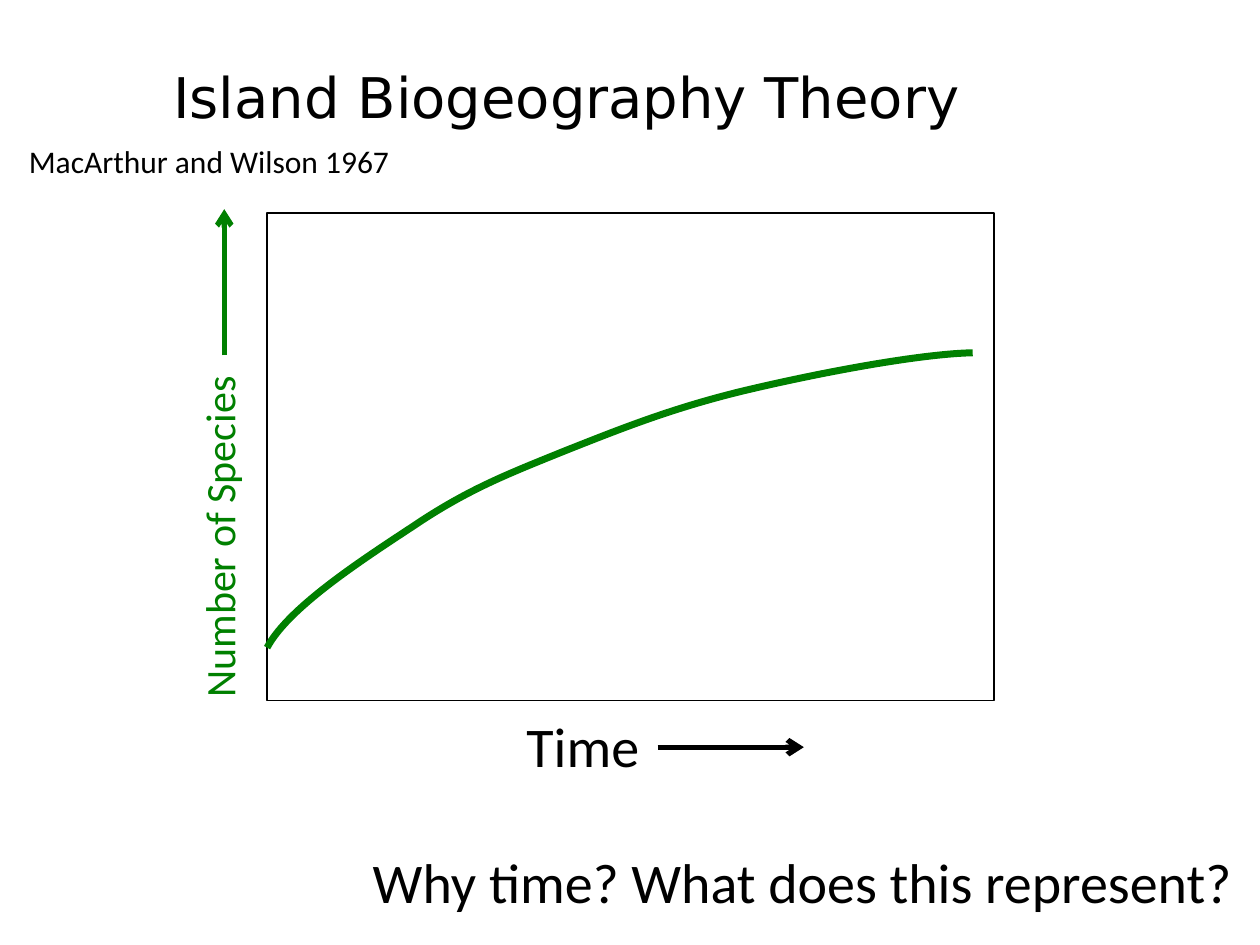
from dataclasses import dataclass

from lxml.etree import SubElement
from pptx import Presentation
from pptx.dml.color import RGBColor
from pptx.enum.shapes import MSO_CONNECTOR, MSO_SHAPE
from pptx.enum.text import MSO_ANCHOR, MSO_AUTO_SIZE, PP_ALIGN
from pptx.oxml.ns import qn
from pptx.util import Inches, Pt


@dataclass(frozen=True)
class Theme:
    black: RGBColor = RGBColor(0x00, 0x00, 0x00)
    green: RGBColor = RGBColor(0x00, 0x80, 0x00)
    title_font: str = "DejaVu Sans"
    body_font: str = "Calibri"
    large: int = 32
    medium: int = 24
    small: int = 18
    frame_line: float = 0.75
    arrow_line: float = 3
    curve_line: float = 4


THEME = Theme()
SLIDE_SIZE = (10, 7.5)

TITLE = ("Island Biogeography Theory", (0, 0.3, 9, 0.93))
PLOT_AREA = (2.12, 1.69, 5.77, 3.87)

# text, box, size, colour, rotation
LABELS = [
    ("Time", (4.08, 5.6, 1.13, 0.64), THEME.large, THEME.black, 0),
    ("Number of Species", (0.33, 3.98, 2.81, 0.5), THEME.medium, THEME.green, 270),
    ("MacArthur and Wilson 1967", (0.13, 1.08, 4.08, 0.5), THEME.small, THEME.black, 0),
    ("Why time? What does this represent?", (2.86, 6.68, 7.05, 0.64),
     THEME.large, THEME.black, 0),
]

# start, end, colour
AXIS_ARROWS = [
    ((5.22, 5.93), (6.38, 5.93), THEME.black),
    ((1.78, 2.82), (1.78, 1.66), THEME.green),
]

# start point, then two control points and an end point for each Bézier segment
SPECIES_CURVE = [
    (2.12, 5.14),
    (2.3, 4.8), (2.96, 4.39), (3.35, 4.13),
    (3.75, 3.87), (4.06, 3.75), (4.48, 3.58),
    (4.91, 3.41), (5.33, 3.24), (5.91, 3.1),
    (6.5, 2.96), (7.29, 2.81), (7.72, 2.8),
]


def inches(values):
    return [Inches(value) for value in values]


def place(shape, box):
    for name, value in zip(("left", "top", "width", "height"), inches(box)):
        setattr(shape, name, value)


def write(text_frame, text, font_name, size, color):
    paragraph = text_frame.paragraphs[0]
    run = paragraph.add_run()
    run.text = text
    for name, value in {"name": font_name, "size": Pt(size), "bold": False}.items():
        setattr(run.font, name, value)
    run.font.color.rgb = color
    return paragraph


def style_line(shape, color, width):
    shape.line.color.rgb = color
    shape.line.width = Pt(width)


def add_title(slide):
    text, box = TITLE
    title = slide.shapes.title
    place(title, box)
    title.text_frame.vertical_anchor = MSO_ANCHOR.MIDDLE
    paragraph = write(title.text_frame, text, THEME.title_font, THEME.large, THEME.black)
    paragraph.alignment = PP_ALIGN.CENTER


def add_plot_area(slide):
    frame = slide.shapes.add_shape(MSO_SHAPE.RECTANGLE, *inches(PLOT_AREA))
    frame.shadow.inherit = False
    frame.fill.background()
    style_line(frame, THEME.black, THEME.frame_line)


def add_label(slide, text, box, size, color, rotation):
    label = slide.shapes.add_textbox(*inches(box))
    label.rotation = rotation
    label.text_frame.word_wrap = False
    label.text_frame.auto_size = MSO_AUTO_SIZE.SHAPE_TO_FIT_TEXT
    write(label.text_frame, text, THEME.body_font, size, color)


def add_arrow(slide, start, end, color):
    arrow = slide.shapes.add_connector(MSO_CONNECTOR.STRAIGHT, *inches(start + end))
    style_line(arrow, color, THEME.arrow_line)
    SubElement(arrow.line._get_or_add_ln(), qn("a:tailEnd"), type="arrow")
    SubElement(arrow._element.spPr, qn("a:effectLst"))


def add_curve(slide, points):
    """Draw a polyline through all points, then turn each three steps into a Bézier."""
    start, *steps = [inches(point) for point in points]
    builder = slide.shapes.build_freeform(*start)
    builder.add_line_segments(steps, close=False)
    curve = builder.convert_to_shape()
    curve.shadow.inherit = False
    curve.fill.background()
    style_line(curve, THEME.green, THEME.curve_line)

    outline = next(curve._element.iter(qn("a:path")))
    lines = outline.findall(qn("a:lnTo"))
    for first in range(0, len(lines), 3):
        bezier = SubElement(outline, qn("a:cubicBezTo"))
        for line in lines[first:first + 3]:
            bezier.append(line[0])
            outline.remove(line)


def main():
    presentation = Presentation()
    presentation.slide_width, presentation.slide_height = inches(SLIDE_SIZE)
    slide = presentation.slides.add_slide(presentation.slide_layouts.get_by_name("Title Only"))
    add_title(slide)
    add_plot_area(slide)
    for label in LABELS:
        add_label(slide, *label)
    for arrow in AXIS_ARROWS:
        add_arrow(slide, *arrow)
    add_curve(slide, SPECIES_CURVE)
    presentation.save("out.pptx")


if __name__ == "__main__":
    main()
